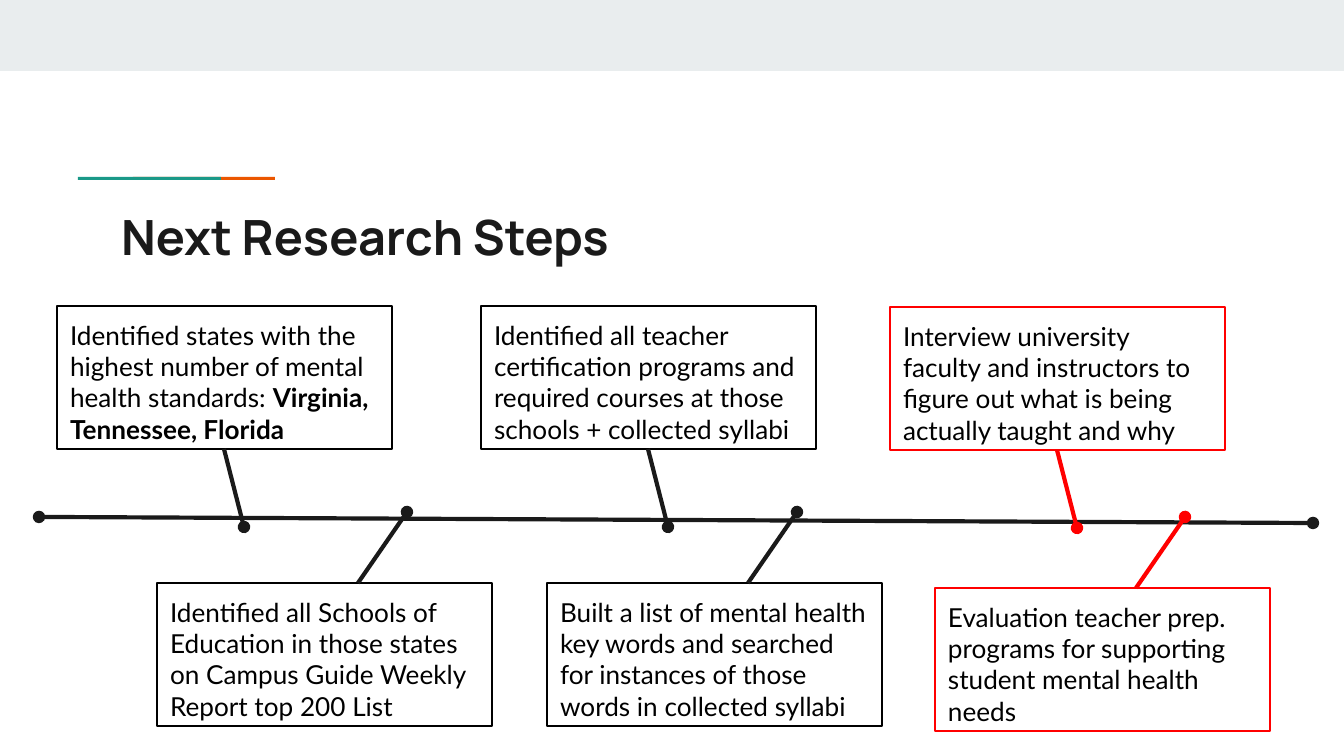
from dataclasses import dataclass

import pptx
import pptx.dml.color
import pptx.enum.shapes
import pptx.enum.text
import pptx.oxml
import pptx.oxml.ns
import pptx.util

EMU_PER_PX = 914400 / 134.4
BLACK, INK, RED = "000000", "1A1A1A", "FF0000"
TEAL, ORANGE, BAND = "1A9988", "EB5600", "E9EDEE"
BOX_W, BOX_H, INSET = 335, 143, 13


@dataclass(frozen=True)
class Step:
    left: int
    top: int
    text: str
    bold: str = ""
    is_next: bool = False
    below: bool = False


STEPS = [
    Step(57, 306, "Identified states with the highest number of mental health standards: ",
         bold="Virginia, Tennessee, Florida"),
    Step(481, 306, "Identified all teacher certification programs and required courses "
         "at those schools + collected syllabi"),
    Step(890, 307, "Interview university faculty and instructors to figure out what is "
         "being actually taught and why", is_next=True),
    Step(157, 583, "Identified all Schools of Education in those states on Campus Guide "
         "Weekly Report top 200 List", below=True),
    Step(547, 583, "Built a list of mental health key words and searched for instances of "
         "those words in collected syllabi", below=True),
    Step(935, 588, "Evaluation teacher prep. programs for supporting student mental health "
         "needs", is_next=True, below=True),
]


def px(n: int) -> int:
    return round(n * EMU_PER_PX)


def color(value: str) -> pptx.dml.color.RGBColor:
    return pptx.dml.color.RGBColor.from_string(value)


def add_rect(slide, x: int, y: int, w: int, h: int):
    sp = slide.shapes.add_shape(pptx.enum.shapes.MSO_SHAPE.RECTANGLE,
                                px(x), px(y), px(w), px(h))
    sp.shadow.inherit = False
    return sp


def add_bar(slide, x: int, y: int, w: int, h: int, fill: str) -> None:
    sp = add_rect(slide, x, y, w, h)
    sp.fill.solid()
    sp.fill.fore_color.rgb = color(fill)
    sp.line.fill.background()


def add_line(slide, start: tuple[int, int], end: tuple[int, int], line: str,
             dots: tuple[str, ...] = ("tailEnd",)) -> None:
    """Draw a straight line with round dots at the named ends."""
    cxn = slide.shapes.add_connector(pptx.enum.shapes.MSO_CONNECTOR.STRAIGHT,
                                     *map(px, start + end))
    cxn.line.color.rgb = color(line)
    cxn.line.width = pptx.util.Pt(2.25)
    ln = cxn.line._get_or_add_ln()
    for dot in dots:
        ln.append(pptx.oxml.parse_xml(
            f'<a:{dot} {pptx.oxml.ns.nsdecls("a")} type="oval"/>'))
    cxn._element.spPr.append(pptx.oxml.parse_xml(
        f'<a:effectLst {pptx.oxml.ns.nsdecls("a")}/>'))


def format_text(tf, font: str, size: int, fill: str) -> None:
    tf.word_wrap = True
    tf.auto_size = pptx.enum.text.MSO_AUTO_SIZE.NONE
    tf.vertical_anchor = pptx.enum.text.MSO_ANCHOR.TOP
    tf.margin_left = tf.margin_right = tf.margin_top = tf.margin_bottom = px(INSET)
    p = tf.paragraphs[0]
    p.alignment = pptx.enum.text.PP_ALIGN.LEFT
    p.font.name, p.font.size = font, pptx.util.Pt(size)
    p.font.color.rgb = color(fill)


def add_step(slide, step: Step) -> None:
    sp = add_rect(slide, step.left, step.top, BOX_W, BOX_H)
    sp.fill.background()
    sp.line.color.rgb = color(RED if step.is_next else BLACK)
    sp.line.width = pptx.util.Pt(1.5)
    p = sp.text_frame.paragraphs[0]
    p.add_run().text = step.text
    if step.bold:
        r = p.add_run()
        r.text = step.bold
        r.font.bold = True
    format_text(sp.text_frame, "Lato", 14, BLACK)

    if step.below:
        x, y, dx, dy = step.left + 201, step.top, 49, -71
    else:
        x, y, dx, dy = step.left + BOX_W // 2, step.top + BOX_H, 20, 78
    add_line(slide, (x, y), (x + dx, y + dy), RED if step.is_next else INK)


def add_title(slide, text: str) -> None:
    title = slide.shapes.title
    title.left, title.top, title.width, title.height = map(px, (108, 194, 1130, 79))
    title.text_frame.text = text
    format_text(title.text_frame, "Manrope", 26, INK)
    title.text_frame.paragraphs[0].font.bold = True


def main() -> None:
    prs = pptx.Presentation()
    prs.slide_width, prs.slide_height = px(1344), px(756)
    slide = prs.slides.add_slide(prs.slide_layouts[5])
    add_bar(slide, 0, 0, 1344, 71, BAND)
    add_bar(slide, 133, 177, 142, 3, ORANGE)
    add_bar(slide, 78, 177, 143, 3, TEAL)
    add_title(slide, "Next Research Steps")
    add_line(slide, (39, 517), (1313, 523), INK, ("headEnd", "tailEnd"))
    for step in STEPS:
        add_step(slide, step)
    prs.save("out.pptx")


if __name__ == "__main__":
    main()
